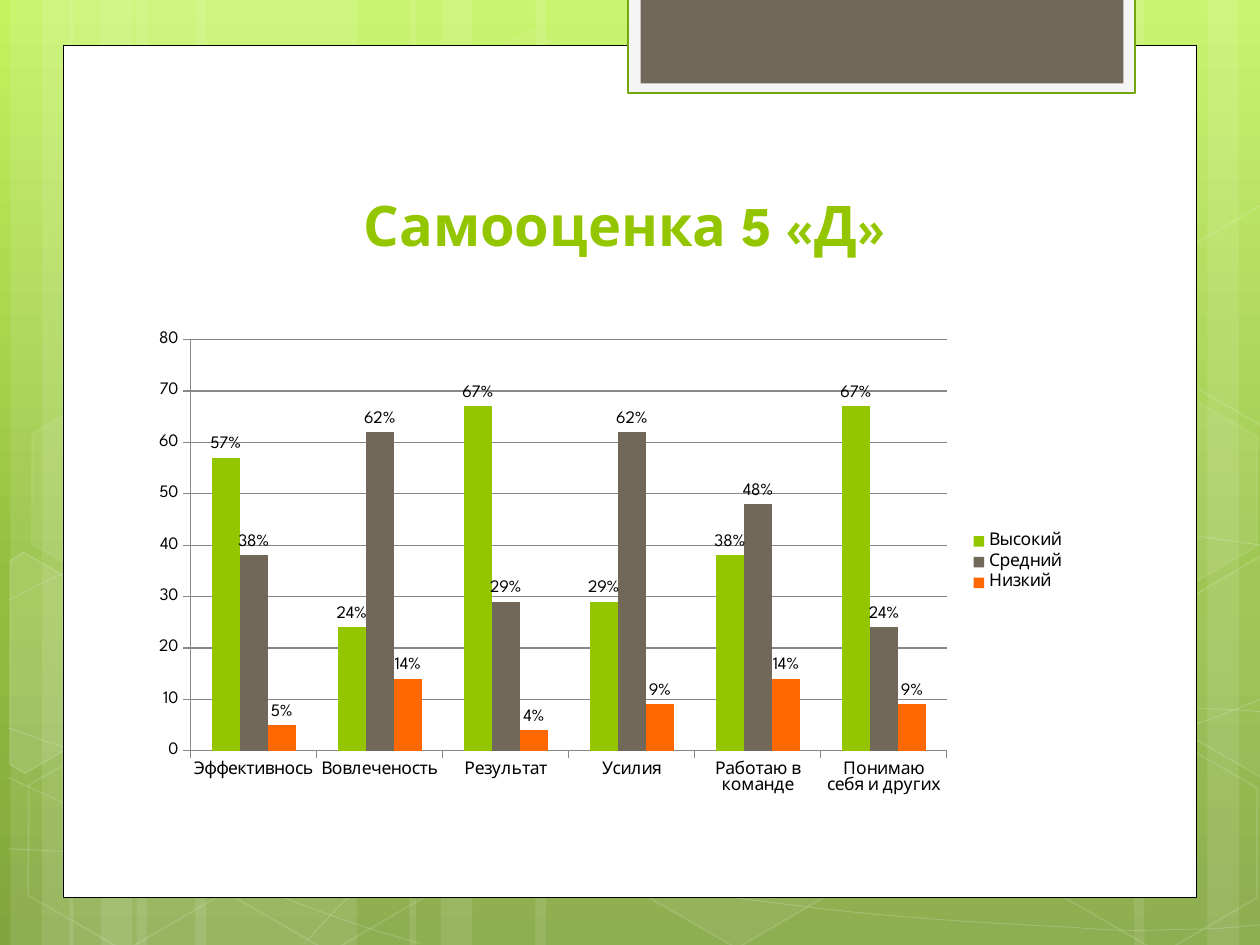
from copy import deepcopy
from math import cos, radians, sin

from lxml.etree import SubElement
from pptx import Presentation
from pptx.chart.data import CategoryChartData
from pptx.dml.color import RGBColor
from pptx.enum.chart import XL_CHART_TYPE, XL_LABEL_POSITION, XL_LEGEND_POSITION, XL_TICK_MARK
from pptx.enum.shapes import MSO_SHAPE
from pptx.enum.text import MSO_ANCHOR, MSO_AUTO_SIZE, PP_ALIGN
from pptx.oxml.ns import qn
from pptx.util import Pt

WHITE = RGBColor(0xFF, 0xFF, 0xFF)
BLACK = RGBColor(0, 0, 0)
GREEN = RGBColor(0x94, 0xC6, 0x00)
DARK_GREEN = RGBColor(0x74, 0xA5, 0x10)
BROWN = RGBColor(0x71, 0x68, 0x5A)
ORANGE = RGBColor(0xFF, 0x67, 0x00)
PALE = RGBColor(0xF5, 0xF5, 0xF5)
GREY = RGBColor(0x87, 0x87, 0x87)
SKY = ((0, RGBColor(0xC3, 0xF3, 0x5F)), (0.62, RGBColor(0x93, 0xBF, 0x3F)),
       (1, RGBColor(0x81, 0xA5, 0x3E)))

STRIPES = ((78, 126), (6, 36), (24, 60), (111.6, 126), (39.6, 36), (57.6, 60),
           (528, 126), (690, 36), (648, 60), (306, 222), (234, 36), (252, 60))
CURVES = (
    ((5, 485), (44, 487), (83, 489), (137, 488), (191, 487), (258, 486), (330, 479),
     (402, 472), (504, 458), (570, 444), (636, 431), (703, 409), (725, 397)),
    ((5, 343), (26, 332), (47, 321), (87, 310), (128, 300), (187, 284), (250, 279),
     (314, 274), (392, 273), (471, 279), (550, 284), (682, 307), (725, 312)),
    ((4, 444), (91, 484), (178, 523), (240, 539)),
    ((5, 416), (27, 424), (50, 432), (92, 443), (134, 454), (197, 472), (257, 485),
     (317, 497), (392, 510), (452, 517), (512, 525), (576, 528), (614, 530),
     (652, 533), (662, 531), (680, 531), (699, 531), (712, 529), (725, 528)),
    ((174, 539), (187, 525), (200, 510), (217, 498), (235, 485), (259, 470), (279, 460),
     (300, 450), (312, 446), (338, 438), (365, 431), (413, 421), (438, 416),
     (464, 411), (467, 411), (490, 410), (512, 408), (547, 405), (572, 405),
     (597, 404), (638, 405), (638, 405), (638, 405), (686, 405), (686, 405),
     (699, 405), (711, 406), (724, 407)),
)
HEXAGONS = ((240.5, 26, 4, 8), (357.8, 424, 6, 12), (8, 425.5, 0, 12), (10, 224.6, 7, 8),
            (125.3, 426.2, 0, 12), (542.2, 326.2, 10, 12), (600.5, 427, 0, 12),
            (600.5, 226, 7, 8))
LEFT_CUT = ((5.8, 320.4), (13.7, 315.4), (69.1, 347), (68.4, 410.4), (14.4, 442.1), (5.8, 437))
RIGHT_CUT = ((666.7, 349.2), (720.7, 317.5), (726.5, 321.1), (726.5, 441.4), (721.4, 444.2),
             (666.7, 412.6))
UPPER_CUT = [(x, y - 200.4) for x, y in RIGHT_CUT]
CUT_HEXAGONS = ((LEFT_CUT, (25.9, 385.2), 10), (RIGHT_CUT, (709.2, 374.4), 4),
                (UPPER_CUT, (709.2, 173.5), 0))

CATEGORIES = ("Эффективнось", "Вовлеченость", "Результат", "Усилия", "Работаю в команде",
              "Понимаю себя и других")
SERIES = (("Высокий", (57, 24, 67, 29, 38, 67), GREEN),
          ("Средний", (38, 62, 29, 62, 48, 24), BROWN),
          ("Низкий", (5, 14, 4, 9, 14, 9), ORANGE))


def turn(points, center, degrees):
    """Return the points turned clockwise about the center."""
    c, s = cos(radians(degrees)), sin(radians(degrees))
    cx, cy = center
    return [(cx + (x - cx) * c - (y - cy) * s, cy + (x - cx) * s + (y - cy) * c)
            for x, y in points]


class Deck:
    """Holds the style and the current slide."""

    font = "League Spartan"

    def __init__(self):
        self.prs = Presentation()
        self.prs.slide_width, self.prs.slide_height = Pt(720), Pt(540)
        self.s = self.prs.slides.add_slide(self.prs.slide_layouts[5])

    def background(self, stops):
        fill = self.s.background.fill
        fill.gradient()
        fill.gradient_angle = 270
        gs_list = self.s.element.find(".//" + qn("a:gsLst"))
        gs_list.append(deepcopy(gs_list[0]))
        for stop, (position, color) in zip(fill.gradient_stops, stops):
            stop.position = position
            stop.color.rgb = color

    def paint(self, sp, fill=None, alpha=100, line=None, width=1, line_alpha=100):
        sp.shadow.inherit = False
        for target, color, opacity in ((sp.fill, fill, alpha), (sp.line.fill, line, line_alpha)):
            if color is None or opacity == 0:
                target.background()
                continue
            target.solid()
            target.fore_color.rgb = color
            if opacity < 100:
                parent = sp.element.spPr if target is sp.fill else sp.line._ln
                clr = parent.find(qn("a:solidFill")).find(qn("a:srgbClr"))
                SubElement(clr, qn("a:alpha"), val=str(opacity * 1000))
        if line is not None:
            sp.line.width = Pt(width)

    def shape(self, kind, box, **style):
        sp = self.s.shapes.add_shape(kind, *map(Pt, box))
        self.paint(sp, **style)
        return sp

    def outline(self, points, close=True, **style):
        builder = self.s.shapes.build_freeform(*points[0], scale=Pt(1))
        builder.add_line_segments(points[1:], close=close)
        sp = builder.convert_to_shape()
        self.paint(sp, **style)
        return sp

    def curve(self, points, **style):
        sp = self.outline(points, close=False, **style)
        track = sp.element.find(".//" + qn("a:path"))
        segments = track.findall(qn("a:lnTo"))
        for i in range(0, len(segments), 3):
            bezier = SubElement(track, qn("a:cubicBezTo"))
            for segment in segments[i:i + 3]:
                bezier.append(segment[0])
                track.remove(segment)

    def title(self, text, box):
        sp = self.s.shapes.title
        self.s.shapes.element.append(sp.element)
        sp.left, sp.top, sp.width, sp.height = map(Pt, box)
        tf = sp.text_frame
        tf.auto_size = MSO_AUTO_SIZE.NONE
        tf.vertical_anchor = MSO_ANCHOR.BOTTOM
        p = tf.paragraphs[0]
        p.alignment = PP_ALIGN.CENTER
        r = p.add_run()
        r.text = text
        r.font.name, r.font.size, r.font.bold = self.font, Pt(32), True
        r.font.color.rgb = GREEN

    def column_chart(self, box, categories, series, layout):
        data = CategoryChartData()
        data.categories = categories
        for name, values, _ in series:
            data.add_series(name, values)
        chart = self.s.shapes.add_chart(XL_CHART_TYPE.COLUMN_CLUSTERED, *map(Pt, box), data).chart
        chart.font.name, chart.font.size = self.font, Pt(10)
        chart.font.color.rgb = BLACK
        chart.has_title = False
        chart.has_legend = True
        chart.legend.position = XL_LEGEND_POSITION.RIGHT
        chart.legend.include_in_layout = False
        plot = chart.plots[0]
        plot.gap_width, plot.overlap, plot.vary_by_categories = 150, 0, False
        plot.has_data_labels = True
        labels = plot.data_labels
        labels.show_value = True
        labels.number_format, labels.number_format_is_linked = '0"%"', False
        labels.position = XL_LABEL_POSITION.OUTSIDE_END
        labels.font.name, labels.font.size = self.font, Pt(10)
        labels.font.color.rgb = BLACK
        for item, (_, _, color) in zip(plot.series, series):
            item.format.fill.solid()
            item.format.fill.fore_color.rgb = color
            item.invert_if_negative = False
        for axis in (chart.category_axis, chart.value_axis):
            axis.major_tick_mark = XL_TICK_MARK.OUTSIDE
            axis.format.line.color.rgb = GREY
        axis = chart.value_axis
        axis.minimum_scale, axis.maximum_scale, axis.major_unit = 0, 80, 10
        axis.major_gridlines.format.line.color.rgb = GREY
        area = chart.element.find(".//" + qn("c:plotArea"))
        for old in area.findall(qn("c:layout")):
            area.remove(old)
        frame = SubElement(area, qn("c:layout"))
        area.insert(0, frame)
        manual = SubElement(frame, qn("c:manualLayout"))
        settings = {"layoutTarget": "inner", "xMode": "edge", "yMode": "edge", **layout}
        for tag, value in settings.items():
            SubElement(manual, qn("c:" + tag), val=str(value))


def main():
    deck = Deck()
    deck.background(SKY)
    for left, width in STRIPES:
        deck.shape(MSO_SHAPE.RECTANGLE, (left, 0, width, 540), fill=WHITE, alpha=10)
    for points in CURVES:
        deck.curve(points, line=WHITE, width=0.5, line_alpha=20)
    for left, top, alpha, line_alpha in HEXAGONS:
        sp = deck.shape(MSO_SHAPE.HEXAGON, (left, top, 126, 109.4), fill=WHITE, alpha=alpha,
                        line=WHITE, line_alpha=line_alpha)
        sp.adjustments[0] = 0.285
        sp.rotation = 30
    for points, center, alpha in CUT_HEXAGONS:
        sp = deck.outline(turn(points, center, -30), fill=WHITE, alpha=alpha, line=WHITE,
                          line_alpha=12)
        sp.rotation = 30
    deck.shape(MSO_SHAPE.RECTANGLE, (36, 26, 648, 487), fill=WHITE, line=BLACK, width=0.5)
    deck.shape(MSO_SHAPE.RECTANGLE, (359, -1.4, 289.6, 54.7), fill=PALE, line=DARK_GREEN,
               width=1.25)
    deck.shape(MSO_SHAPE.RECTANGLE, (366, -1.4, 276, 49), fill=BROWN)
    deck.title("Самооценка 5 «Д»", (82.1, 81, 550, 70))
    deck.column_chart((82.3, 183, 533.5, 276.5), CATEGORIES, SERIES,
                      {"x": 0.05, "y": 0.04, "w": 0.81, "h": 0.85})
    deck.prs.save("out.pptx")


if __name__ == "__main__":
    main()
